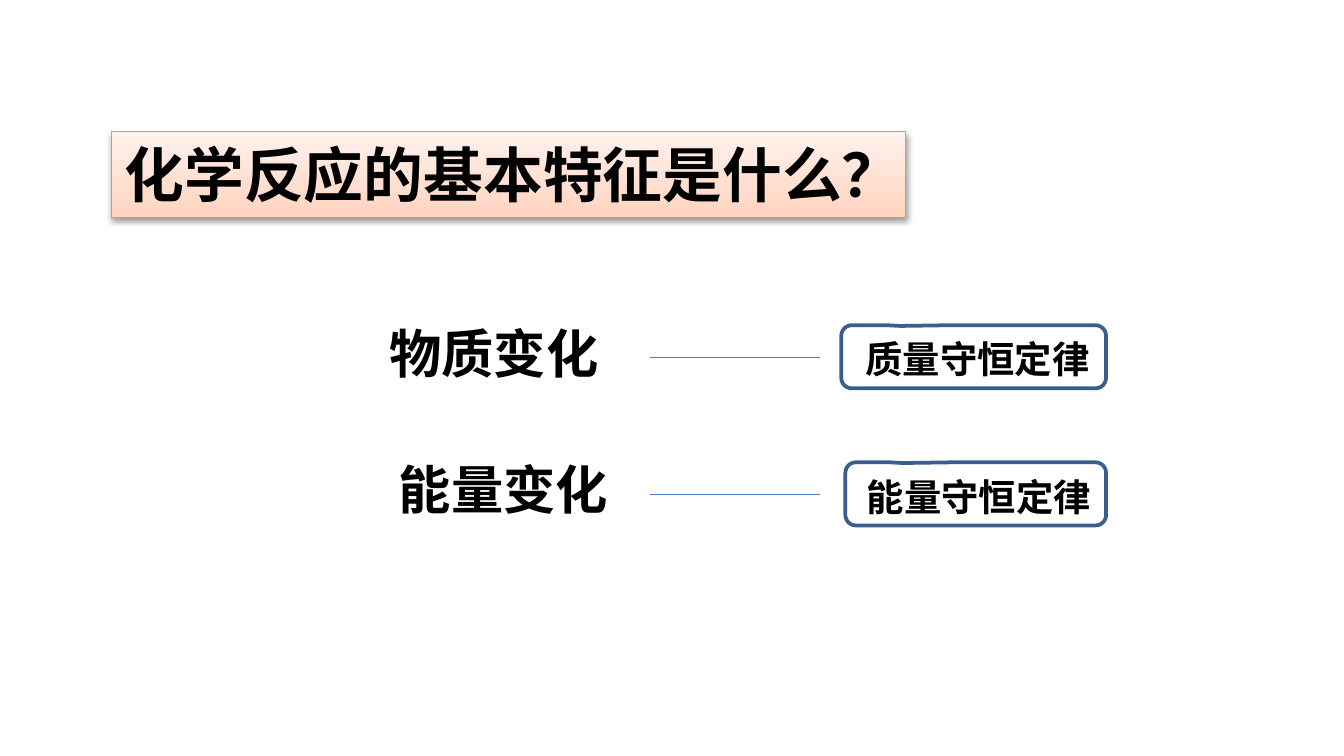
"""Build a slide on the basic features of chemical reactions."""
from lxml import etree
from pptx import Presentation
from pptx.dml.color import RGBColor
from pptx.enum.shapes import MSO_CONNECTOR, MSO_SHAPE
from pptx.enum.text import MSO_ANCHOR, MSO_AUTO_SIZE, PP_ALIGN
from pptx.oxml import parse_xml
from pptx.oxml.ns import nsdecls, qn
from pptx.util import Inches, Pt

RECTANGLE = MSO_SHAPE.RECTANGLE
CALLOUT = MSO_SHAPE.ROUNDED_RECTANGULAR_CALLOUT
STRAIGHT = MSO_CONNECTOR.STRAIGHT
TOP = MSO_ANCHOR.TOP
LEFT = PP_ALIGN.LEFT
FIT_SHAPE = MSO_AUTO_SIZE.SHAPE_TO_FIT_TEXT

CHINESE_FONT = "Noto Sans CJK SC"
LATIN_FONT = "Calibri"
COLORS = {
    "text": "000000",
    "title_line": "F69240",
    "connector": "4B7EBC",
    "callout_line": "3A5F8C",
    "shadow": "000000",
}
TITLE_GRADIENT = [(0, "FFD2BD"), (35, "FFDED0"), (100, "FFF2ED")]


def set_line(line, color, width):
    """Give a line its colour and its width in points."""
    line.color.rgb = RGBColor.from_string(COLORS[color])
    line.width = Pt(width)


def write_text(shape, text, size, font_name=CHINESE_FONT, wrap=True):
    """Write one bold left-aligned paragraph into a shape."""
    frame = shape.text_frame
    frame_format = {"word_wrap": wrap, "auto_size": FIT_SHAPE, "vertical_anchor": TOP}
    for name, value in frame_format.items():
        setattr(frame, name, value)
    paragraph = frame.paragraphs[0]
    paragraph.alignment = LEFT
    run = paragraph.add_run()
    run.text = text
    for name, value in {"name": font_name, "size": Pt(size), "bold": True}.items():
        setattr(run.font, name, value)
    run.font.color.rgb = RGBColor.from_string(COLORS["text"])
    east_asian = etree.SubElement(run.font._element, qn("a:ea"))
    east_asian.set("typeface", CHINESE_FONT)


def add_text(shapes, box, text, size, **text_format):
    """Add a text box at left, top, width, height in inches."""
    text_box = shapes.add_textbox(*map(Inches, box))
    write_text(text_box, text, size, **text_format)


def add_title(slide, box, text):
    """Add the title box with its gradient and soft shadow."""
    shape = slide.shapes.add_shape(RECTANGLE, *map(Inches, box))
    set_line(shape.line, "title_line", 0.75)
    stops = "".join(
        f'<a:gs pos="{position * 1000}"><a:srgbClr val="{color}"/></a:gs>'
        for position, color in TITLE_GRADIENT
    )
    gradient = parse_xml(
        f'<a:gradFill {nsdecls("a")} rotWithShape="1"><a:gsLst>{stops}</a:gsLst>'
        '<a:lin ang="16200000" scaled="1"/></a:gradFill>'
    )
    properties = shape._element.spPr
    properties.find(qn("a:prstGeom")).addnext(gradient)
    properties.append(parse_xml(
        f'<a:effectLst {nsdecls("a")}><a:outerShdw blurRad="{Pt(3.1)}" '
        f'dist="{Pt(1.6)}" dir="5400000" rotWithShape="0">'
        f'<a:srgbClr val="{COLORS["shadow"]}"><a:alpha val="38000"/></a:srgbClr>'
        "</a:outerShdw></a:effectLst>"
    ))
    write_text(shape, text, 32)


def add_link(slide, left, right, height):
    """Add a horizontal line without a shadow."""
    ends = map(Inches, (left, height, right, height))
    connector = slide.shapes.add_connector(STRAIGHT, *ends)
    set_line(connector.line, "connector", 0.75)
    etree.SubElement(connector._element.spPr, qn("a:effectLst"))


def add_law(slide, callout_box, tip, text_box, text):
    """Add a grouped callout outline and the name of a law."""
    group = slide.shapes.add_group_shape()
    callout = group.shapes.add_shape(CALLOUT, *map(Inches, callout_box))
    for index, value in enumerate((tip, -0.488, 0.167)):
        callout.adjustments[index] = value
    callout.fill.background()
    callout.shadow.inherit = False
    set_line(callout.line, "callout_line", 2)
    add_text(group.shapes, text_box, text, 20, font_name=LATIN_FONT, wrap=False)


def main():
    """Build and save the slide."""
    presentation = Presentation()
    presentation.slide_width = Inches(10)
    presentation.slide_height = Inches(10 * 9 / 16)
    slide = presentation.slides.add_slide(presentation.slide_layouts[6])

    add_title(slide, (0.83, 0.98, 5.91, 0.64), "化学反应的基本特征是什么？")
    changes = [("物质变化", (2.8, 2.34, 1.89, 0.57)), ("能量变化", (2.87, 3.35, 1.81, 0.57))]
    laws = [
        ((6.26, 2.42, 1.97, 0.47), -0.275, (6.34, 2.45, 1.88, 0.44), "质量守恒定律"),
        ((6.29, 3.44, 1.94, 0.47), -0.28, (6.35, 3.48, 1.88, 0.44), "能量守恒定律"),
    ]
    for row, ((change, box), law) in enumerate(zip(changes, laws)):
        add_text(slide.shapes, box, change, 28)
        add_link(slide, 4.84, 6.1, 2.66 + row * 1.02)
        add_law(slide, *law)

    presentation.save("out.pptx")


if __name__ == "__main__":
    main()
